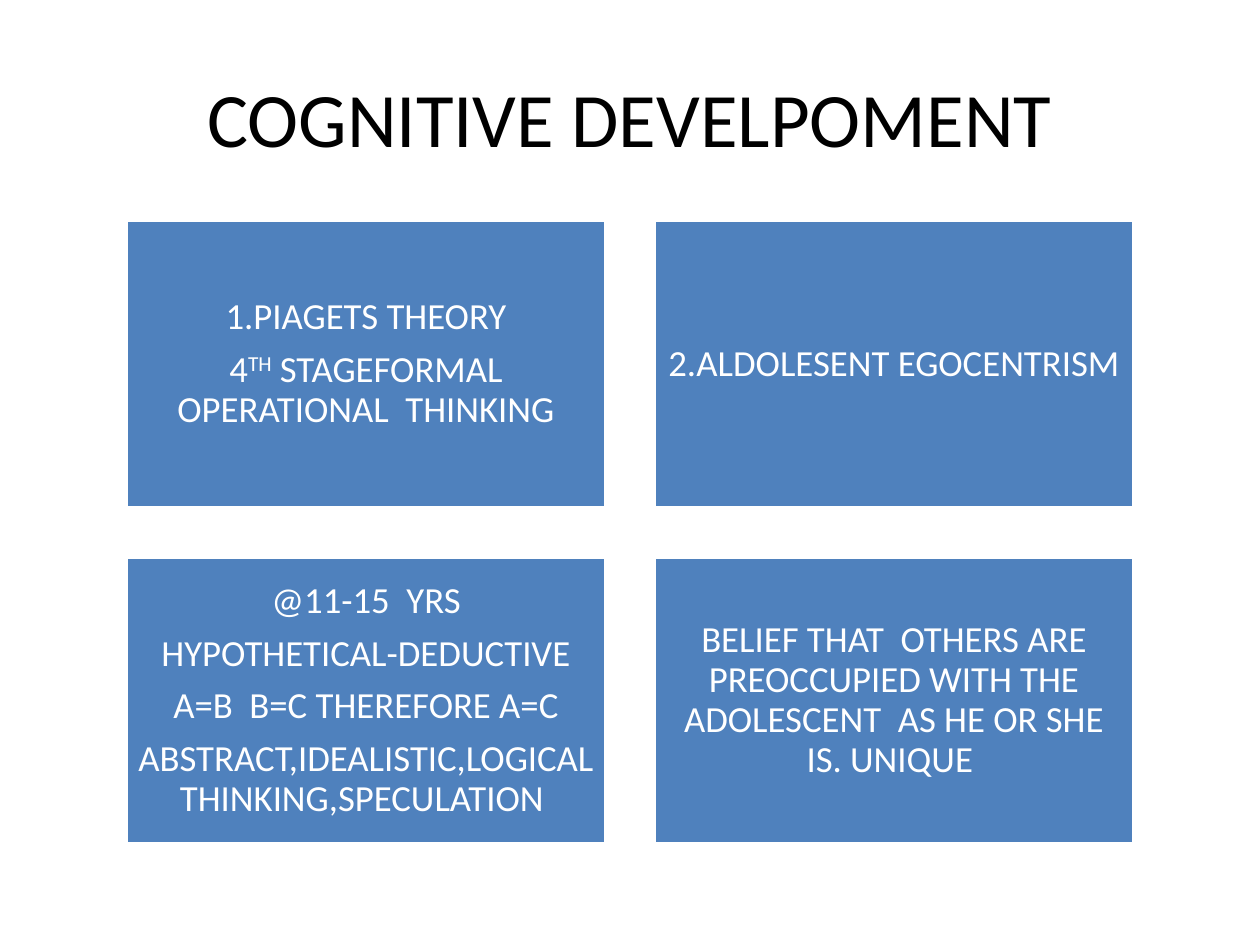
"""Build the cognitive development slide: a title above a two-by-two grid of text boxes."""
from pptx import Presentation
from pptx.dml.color import RGBColor
from pptx.enum.shapes import MSO_SHAPE
from pptx.enum.text import MSO_ANCHOR, PP_ALIGN
from pptx.util import Inches, Pt

RECTANGLE = MSO_SHAPE.RECTANGLE
MIDDLE = MSO_ANCHOR.MIDDLE
CENTER = PP_ALIGN.CENTER

THEME = {
    "font": "Calibri",
    "title_size": 44,
    "box_size": 21,
    "title_color": RGBColor(0x00, 0x00, 0x00),
    "box_fill": RGBColor(0x4F, 0x81, 0xBD),
    "box_text": RGBColor(0xFF, 0xFF, 0xFF),
    "box_line": RGBColor(0xFF, 0xFF, 0xFF),
}

TITLE = "COGNITIVE DEVELPOMENT"
SUPERSCRIPT = "TH"
BOXES = [
    [["1.PIAGETS THEORY"], ["4", SUPERSCRIPT, " STAGEFORMAL OPERATIONAL  THINKING"]],
    [["2.ALDOLESENT EGOCENTRISM"]],
    [
        ["@11-15  YRS"],
        ["HYPOTHETICAL-DEDUCTIVE"],
        ["A=B  B=C THEREFORE A=C"],
        ["ABSTRACT,IDEALISTIC,LOGICAL THINKING,SPECULATION "],
    ],
    [["BELIEF THAT  OTHERS ARE PREOCCUPIED WITH THE ADOLESCENT  AS HE OR SHE IS. UNIQUE "]],
]

COLUMNS = 2
GRID_LEFT, GRID_TOP = 1, 1.75
BOX_WIDTH, BOX_HEIGHT = 3.81, 2.28
GAP_X, GAP_Y = 0.38, 0.39
INSET = 0.09


def style_paragraph(paragraph, size, color):
    paragraph.alignment = CENTER
    paragraph.font.name = THEME["font"]
    paragraph.font.size = Pt(size)
    paragraph.font.color.rgb = color


def add_title(slide):
    title = slide.shapes.title
    title.left, title.top = Inches(0.5), Inches(0.3)
    title.width, title.height = Inches(9), Inches(1.25)
    title.text_frame.text = TITLE
    title.text_frame.vertical_anchor = MIDDLE
    style_paragraph(title.text_frame.paragraphs[0], THEME["title_size"], THEME["title_color"])


def add_box(slide, index, paragraphs):
    row, column = divmod(index, COLUMNS)
    box = slide.shapes.add_shape(
        RECTANGLE,
        Inches(GRID_LEFT + column * (BOX_WIDTH + GAP_X)),
        Inches(GRID_TOP + row * (BOX_HEIGHT + GAP_Y)),
        Inches(BOX_WIDTH),
        Inches(BOX_HEIGHT),
    )
    box.shadow.inherit = False
    box.fill.solid()
    box.fill.fore_color.rgb = THEME["box_fill"]
    box.line.color.rgb = THEME["box_line"]
    box.line.width = Pt(2)

    frame = box.text_frame
    frame.word_wrap = True
    frame.vertical_anchor = MIDDLE
    frame.margin_left = frame.margin_right = Inches(INSET)
    frame.margin_top = frame.margin_bottom = Inches(INSET)
    for number, pieces in enumerate(paragraphs):
        paragraph = frame.add_paragraph() if number else frame.paragraphs[0]
        style_paragraph(paragraph, THEME["box_size"], THEME["box_text"])
        paragraph.line_spacing = 0.9
        paragraph.space_after = Pt(0.35 * THEME["box_size"])
        for piece in pieces:
            run = paragraph.add_run()
            run.text = piece
            if piece == SUPERSCRIPT:
                run._r.get_or_add_rPr().set("baseline", "30000")


def main():
    presentation = Presentation()
    presentation.slide_width, presentation.slide_height = Inches(10), Inches(7.5)
    slide = presentation.slides.add_slide(presentation.slide_layouts[5])
    add_title(slide)
    for index, paragraphs in enumerate(BOXES):
        add_box(slide, index, paragraphs)
    presentation.save("out.pptx")


if __name__ == "__main__":
    main()
